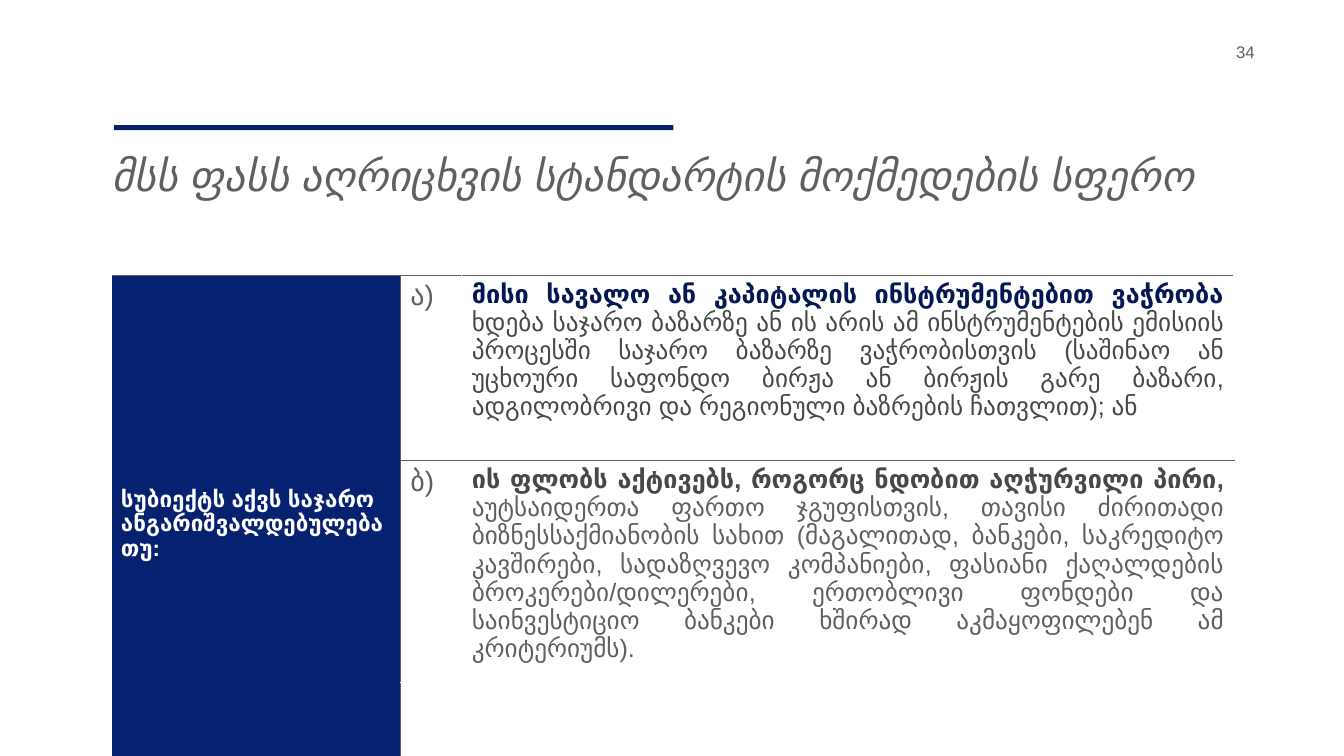
from lxml import etree
from pptx import Presentation
from pptx.dml.color import RGBColor
from pptx.enum.shapes import MSO_SHAPE
from pptx.enum.text import MSO_ANCHOR, PP_ALIGN
from pptx.oxml.ns import qn
from pptx.util import Inches, Pt

COLORS = {"navy": "072171", "deep": "051855", "grey": "5F6061", "dark": "474849", "white": "FFFFFF"}
COLUMN_WIDTHS = [2.87, 0.61, 7.66]
ROW_HEIGHTS = [1.84, 2.05, 0.88]
TABLE_LEFT, TABLE_TOP = 1.1, 2.73


def write(frame, spans, size):
    """Fill the first paragraph with (text, colour, bold, italic) spans."""
    para = frame.paragraphs[0]
    for text, color, bold, italic in spans:
        span = para.add_run()
        span.text = text
        span.font.name, span.font.size = "Arial", Pt(size)
        span.font.bold, span.font.italic = bold, italic
        span.font.color.rgb = RGBColor.from_string(COLORS[color])
    return para


def style_cell(cell, fill, left, right, top, bottom):
    """Set the four one-point borders, then the fill, which must follow them."""
    properties = cell._tc.get_or_add_tcPr()
    for side, color in zip("LRTB", (left, right, top, bottom)):
        line = etree.SubElement(properties, qn(f"a:ln{side}"), w=str(Pt(1)))
        solid = etree.SubElement(line, qn("a:solidFill"))
        etree.SubElement(solid, qn("a:srgbClr"), val=COLORS[color])
    cell.fill.solid()
    cell.fill.fore_color.rgb = RGBColor.from_string(COLORS[fill])


deck = Presentation()
deck.slide_width, deck.slide_height = Inches(13.33), Inches(7.5)
page = deck.slides.add_slide(deck.slide_layouts[6])

# Accent bar, title and page number
bar = page.shapes.add_shape(MSO_SHAPE.RECTANGLE, Inches(1.13), Inches(1.24), Inches(5.55), Inches(0.05))
bar.shadow.inherit = False
bar.fill.solid()
bar.fill.fore_color.rgb = RGBColor.from_string(COLORS["navy"])
bar.line.fill.background()

for text, size, italic, place in [
    ("მსს ფასს აღრიცხვის სტანდარტის მოქმედების სფერო", 30, True, (1.11, 1.48, 11.98, 1.25)),
    ("34", 12, False, (12.26, 0.41, 0.67, 0.29)),
]:
    box = page.shapes.add_textbox(*map(Inches, place))
    frame = box.text_frame
    frame.word_wrap = True
    frame.margin_left = frame.margin_right = frame.margin_top = frame.margin_bottom = 0
    write(frame, [(text, "grey", False, italic)], size)

# Criteria table
table = page.shapes.add_table(
    len(ROW_HEIGHTS), len(COLUMN_WIDTHS), Inches(TABLE_LEFT), Inches(TABLE_TOP),
    Inches(sum(COLUMN_WIDTHS)), Inches(sum(ROW_HEIGHTS)),
).table
table.first_row = table.horz_banding = False
for column, width in zip(table.columns, COLUMN_WIDTHS):
    column.width = Inches(width)
for row, height in zip(table.rows, ROW_HEIGHTS):
    row.height = Inches(height)

label = table.cell(0, 0)
label.merge(table.cell(2, 0))
style_cell(label, "navy", "white", "grey", "grey", "white")
label.vertical_anchor = MSO_ANCHOR.MIDDLE
label.margin_bottom = Inches(0.6)
write(label.text_frame, [("სუბიექტს აქვს საჯარო ანგარიშვალდებულება თუ:", "white", True, False)], 16)

row_lines = ["grey", "grey", "white", "white"]
for row in range(3):
    for column, left in ((1, "grey"), (2, "white")):
        style_cell(table.cell(row, column), "white", left, "white", row_lines[row], row_lines[row + 1])

criteria = [
    ("ა)", "მისი სავალო ან კაპიტალის ინსტრუმენტებით ვაჭრობა ", "deep",
     "ხდება საჯარო ბაზარზე ან ის არის ამ ინსტრუმენტების ემისიის პროცესში საჯარო ბაზარზე "
     "ვაჭრობისთვის (საშინაო ან უცხოური საფონდო ბირჟა ან ბირჟის გარე ბაზარი, ადგილობრივი და "
     "რეგიონული ბაზრების ჩათვლით); ან", "dark"),
    ("ბ)", "ის ფლობს აქტივებს, როგორც ნდობით აღჭურვილი პირი, ", "dark",
     "აუტსაიდერთა ფართო ჯგუფისთვის, თავისი ძირითადი ბიზნესსაქმიანობის სახით (მაგალითად, "
     "ბანკები, საკრედიტო კავშირები, სადაზღვევო კომპანიები, ფასიანი ქაღალდების "
     "ბროკერები/დილერები, ერთობლივი ფონდები და საინვესტიციო ბანკები ხშირად აკმაყოფილებენ "
     "ამ კრიტერიუმს).", "grey"),
]
for row, (letter, lead, lead_color, detail, detail_color) in enumerate(criteria):
    write(table.cell(row, 1).text_frame, [(letter, "grey", False, False)], 20)
    para = write(table.cell(row, 2).text_frame,
                 [(lead, lead_color, True, False), (detail, detail_color, False, False)], 18)
    para.alignment = PP_ALIGN.JUSTIFY

deck.save("out.pptx")
